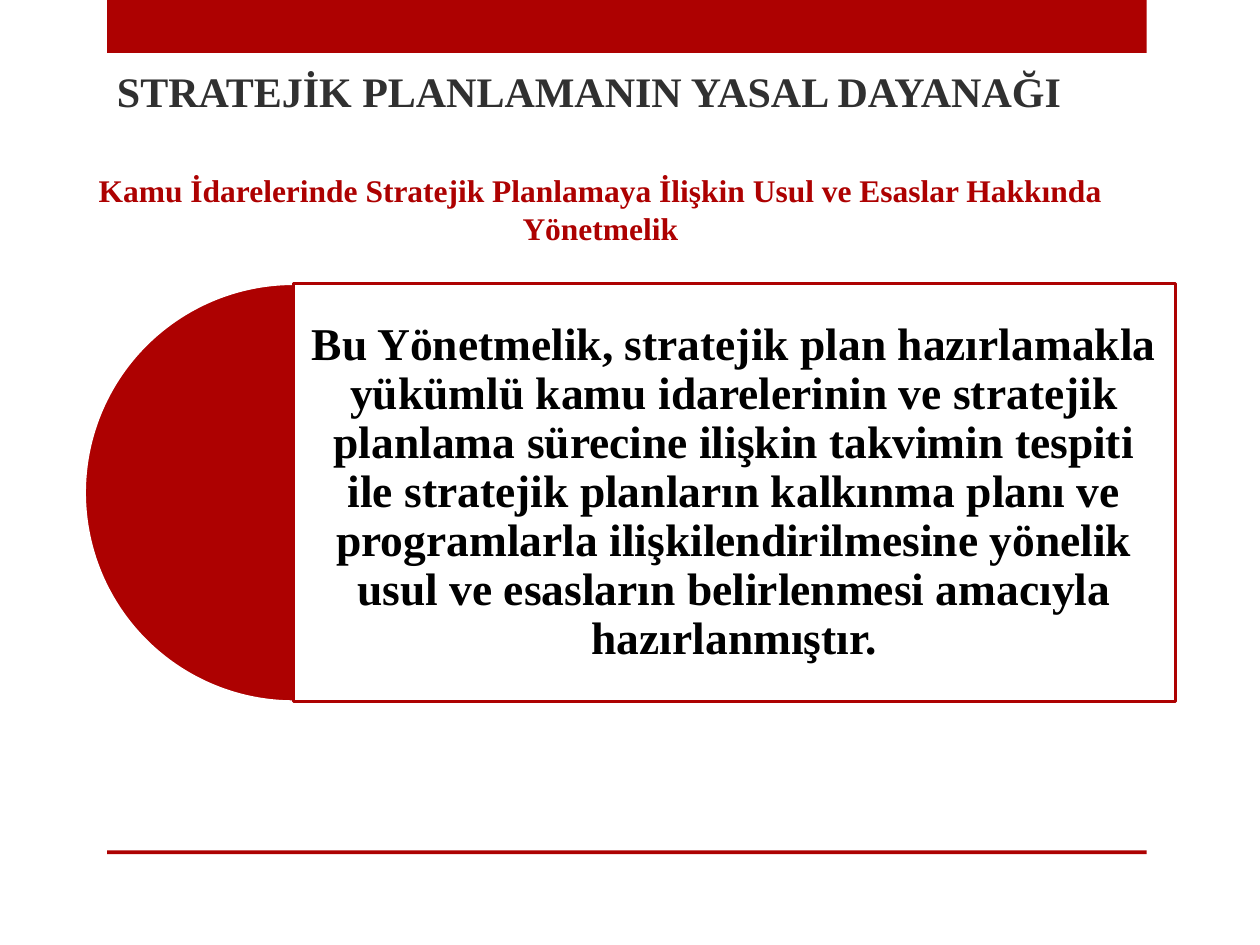
from lxml import etree
from pptx import Presentation
from pptx.dml.color import RGBColor
from pptx.enum.shapes import MSO_SHAPE
from pptx.enum.text import MSO_ANCHOR, PP_ALIGN
from pptx.oxml.ns import qn
from pptx.util import Inches, Pt

RECTANGLE, PIE = MSO_SHAPE.RECTANGLE, MSO_SHAPE.PIE
TOP, MIDDLE = MSO_ANCHOR.TOP, MSO_ANCHOR.MIDDLE
LEFT, CENTER = PP_ALIGN.LEFT, PP_ALIGN.CENTER
FONT = "Times New Roman"
RED, WHITE, BLACK, GREY = "AD0101", "FFFFFF", "000000", "303030"

TITLE = "STRATEJİK PLANLAMANIN YASAL DAYANAĞI"
REGULATION = ("Kamu İdarelerinde Stratejik Planlamaya İlişkin Usul ve Esaslar "
              "Hakkında Yönetmelik")
PURPOSE = ("Bu Yönetmelik, stratejik plan hazırlamakla yükümlü kamu idarelerinin "
           "ve stratejik planlama sürecine ilişkin takvimin tespiti ile stratejik "
           "planların kalkınma planı ve programlarla ilişkilendirilmesine yönelik "
           "usul ve esasların belirlenmesi amacıyla hazırlanmıştır.")


def color(hex_string):
    """Return the colour for a hex string."""
    return RGBColor.from_string(hex_string)


def add_panel(slide, kind, box, fill, line=None):
    """Add a filled shape with an optional outline."""
    panel = slide.shapes.add_shape(kind, *map(Inches, box))
    panel.shadow.inherit = False
    panel.fill.solid()
    panel.fill.fore_color.rgb = color(fill)
    if line:
        panel.line.color.rgb = color(line)
        panel.line.width = Pt(1.75)
    else:
        panel.line.fill.background()
    return panel


def write(shape, text, size, ink, align, anchor):
    """Write one bold paragraph into a shape and return it."""
    frame = shape.text_frame
    frame.word_wrap = True
    frame.vertical_anchor = anchor
    frame.text = text
    paragraph = frame.paragraphs[0]
    paragraph.alignment = align
    font = paragraph.runs[0].font
    font.name, font.size, font.bold = FONT, Pt(size), True
    font.color.rgb = color(ink)
    return paragraph


def add_heading(slide, box, text, size, ink, align, anchor):
    """Add a text box holding a heading."""
    heading = slide.shapes.add_textbox(*map(Inches, box))
    write(heading, text, size, ink, align, anchor)


def add_frame_bars(slide, left, width):
    """Add the top band and the thin rule near the foot."""
    for top, height in ((0, 0.42), (6.75, 0.03)):
        add_panel(slide, RECTANGLE, (left, top, width, height), RED)


def add_purpose(slide, box):
    """Add a half disc and the purpose statement beside it."""
    left, top, width, height = box
    radius = height / 2
    half_disc = add_panel(slide, PIE, (left, top, height, height), RED, WHITE)
    half_disc.adjustments[0] = 54
    half_disc.adjustments[1] = 162

    statement = add_panel(slide, RECTANGLE,
                          (left + radius, top, width - radius, height), WHITE, RED)
    fill_color = statement.fill._xPr.find(qn("a:solidFill"))[0]
    etree.SubElement(fill_color, qn("a:alpha"), val="90000")
    frame = statement.text_frame
    frame.margin_left = frame.margin_right = Inches(0.11)
    frame.margin_top = frame.margin_bottom = Inches(0.11)
    paragraph = write(statement, PURPOSE, 26, BLACK, CENTER, MIDDLE)
    paragraph.line_spacing = 0.9


def main():
    """Build and save the slide."""
    deck = Presentation()
    deck.slide_width, deck.slide_height = Inches(10), Inches(7.5)
    slide = deck.slides.add_slide(deck.slide_layouts[6])
    add_frame_bars(slide, 0.85, 8.25)
    add_heading(slide, (0.83, 0.36, 8.25, 0.72), TITLE, 24, GREY, LEFT, MIDDLE)
    add_heading(slide, (0.2, 1.31, 9.13, 0.71), REGULATION, 18, RED, CENTER, TOP)
    add_purpose(slide, (0.67, 2.25, 8.66, 3.32))
    deck.save("out.pptx")


if __name__ == "__main__":
    main()
